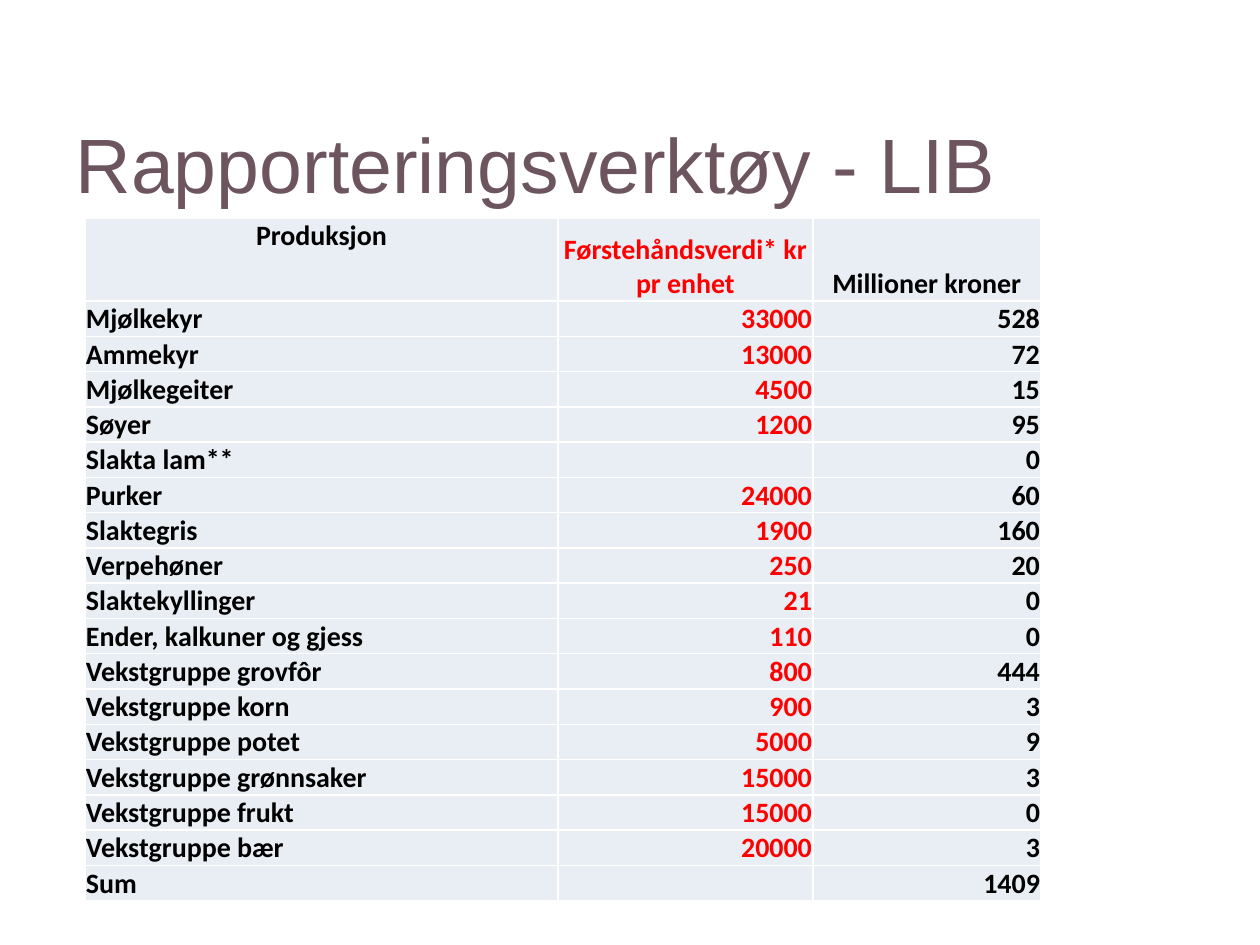
from lxml.etree import SubElement
from pptx import Presentation
from pptx.dml.color import RGBColor
from pptx.enum.text import MSO_ANCHOR, PP_ALIGN
from pptx.oxml.ns import qn
from pptx.util import Emu, Pt

PX = 914400 // 126
COLORS = {
    "title": "6D5560",
    "text": "000000",
    "value": "FF0000",
    "cell": "E9EDF4",
    "border": "FFFFFF",
}
HEADER = ("Produksjon", "Førstehåndsverdi* kr pr enhet", "Millioner kroner")
PRODUCTION = [
    ("Mjølkekyr", "33000", "528"),
    ("Ammekyr", "13000", "72"),
    ("Mjølkegeiter", "4500", "15"),
    ("Søyer", "1200", "95"),
    ("Slakta lam**", "", "0"),
    ("Purker", "24000", "60"),
    ("Slaktegris", "1900", "160"),
    ("Verpehøner", "250", "20"),
    ("Slaktekyllinger", "21", "0"),
    ("Ender, kalkuner og gjess", "110", "0"),
    ("Vekstgruppe grovfôr", "800", "444"),
    ("Vekstgruppe korn", "900", "3"),
    ("Vekstgruppe potet", "5000", "9"),
    ("Vekstgruppe grønnsaker", "15000", "3"),
    ("Vekstgruppe frukt", "15000", "0"),
    ("Vekstgruppe bær", "20000", "3"),
    ("Sum", "", "1409"),
]


def px(length):
    return Emu(length * PX)


class SlideBuilder:
    title_font = "Arial"
    table_font = "Calibri"
    title_size = 44
    table_size = 16

    def __init__(self, deck):
        self.page = deck.slides.add_slide(deck.slide_layouts[5])

    def span(self, para, text, font, size, color, bold=False):
        span = para.add_run()
        span.text = text
        span.font.name = font
        span.font.size = Pt(size)
        span.font.bold = bold
        span.font.color.rgb = RGBColor.from_string(COLORS[color])

    def title(self, text, left, top, width, height):
        box = self.page.shapes.title
        box.left, box.top, box.width, box.height = map(px, (left, top, width, height))
        box.text_frame.vertical_anchor = MSO_ANCHOR.MIDDLE
        para = box.text_frame.paragraphs[0]
        para.alignment = PP_ALIGN.LEFT
        self.span(para, text, self.title_font, self.title_size, "title")

    def borders(self, cell):
        properties = cell._tc.get_or_add_tcPr()
        for position, side in enumerate(("lnL", "lnR", "lnT", "lnB")):
            line = SubElement(properties, qn(f"a:{side}"), w=str(Pt(1)))
            fill = SubElement(line, qn("a:solidFill"))
            SubElement(fill, qn("a:srgbClr"), val=COLORS["border"])
            properties.insert(position, line)

    def cell(self, cell, text, color, alignment, anchor):
        cell.fill.solid()
        cell.fill.fore_color.rgb = RGBColor.from_string(COLORS["cell"])
        self.borders(cell)
        cell.margin_left = cell.margin_right = cell.margin_top = px(1)
        cell.margin_bottom = 0
        cell.vertical_anchor = anchor
        para = cell.text_frame.paragraphs[0]
        para.alignment = alignment
        if text:
            self.span(para, text, self.table_font, self.table_size, color, True)
        else:
            SubElement(para._p, qn("a:endParaRPr"), sz=str(self.table_size * 100))

    def table(self, rows, left, top, widths, header_height, row_height):
        height = header_height + row_height * (len(rows) - 1)
        frame = self.page.shapes.add_table(
            len(rows), len(widths), px(left), px(top), px(sum(widths)), px(height)
        )
        table = frame.table
        for column, width in zip(table.columns, widths):
            column.width = px(width)
        for row_index, values in enumerate(rows):
            is_header = row_index == 0
            table.rows[row_index].height = px(header_height if is_header else row_height)
            for column_index, text in enumerate(values):
                if is_header:
                    alignment = PP_ALIGN.CENTER
                else:
                    alignment = PP_ALIGN.RIGHT if column_index else PP_ALIGN.LEFT
                at_top = is_header and column_index == 0
                anchor = MSO_ANCHOR.TOP if at_top else MSO_ANCHOR.BOTTOM
                color = "value" if column_index == 1 else "text"
                cell = table.cell(row_index, column_index)
                self.cell(cell, text, color, alignment, anchor)


def main():
    deck = Presentation()
    deck.slide_width = px(1260)
    deck.slide_height = px(945)
    builder = SlideBuilder(deck)
    builder.title("Rapporteringsverktøy - LIB", 63, 107, 1134, 111)
    builder.table([HEADER, *PRODUCTION], 85, 218, (473, 255, 228), 83, 35)
    deck.save("out.pptx")


if __name__ == "__main__":
    main()
